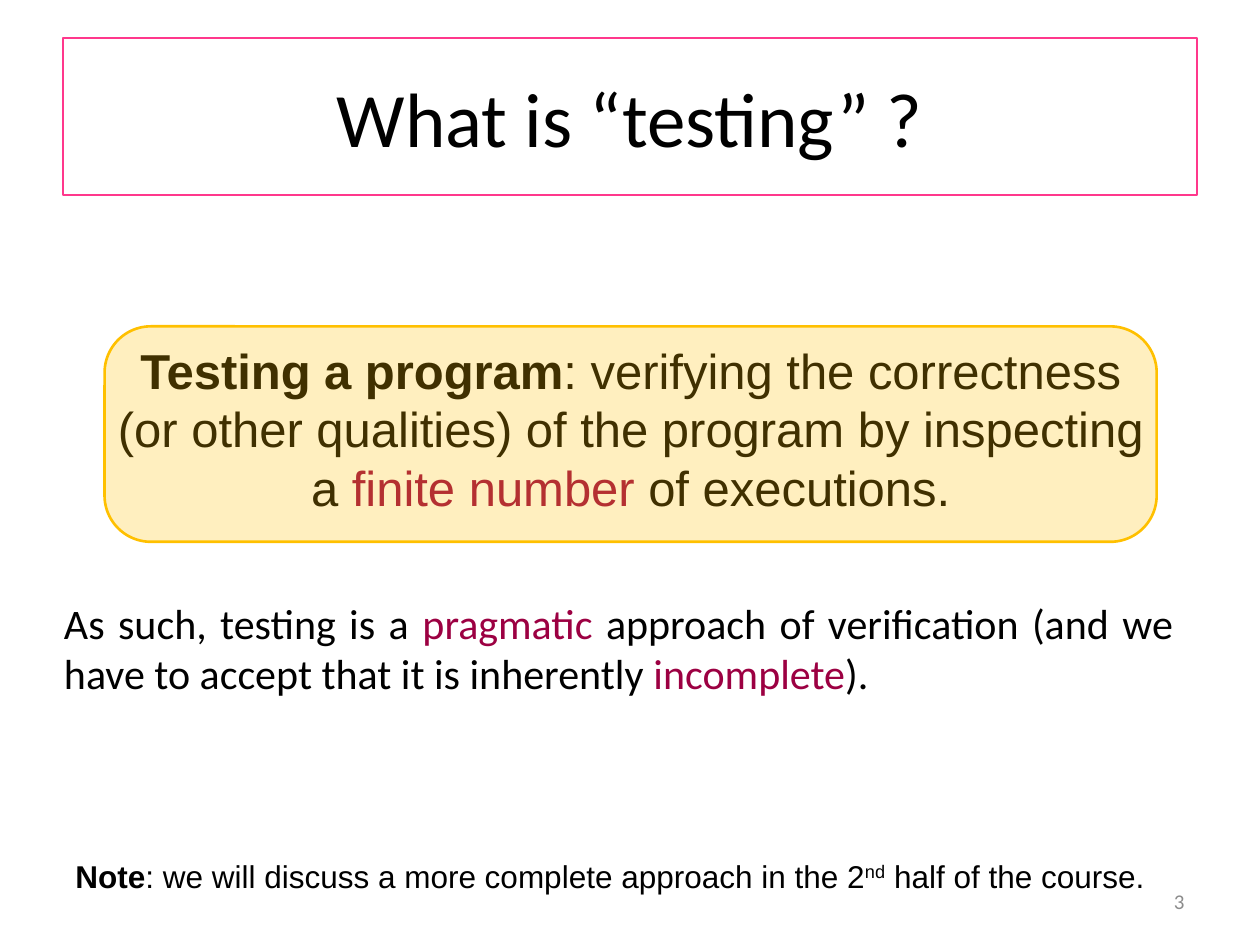
from dataclasses import dataclass

import pptx
import pptx.dml.color
import pptx.enum.shapes
import pptx.enum.text
import pptx.oxml.ns
import pptx.util

Inches = pptx.util.Inches
Pt = pptx.util.Pt
Align = pptx.enum.text.PP_ALIGN
Anchor = pptx.enum.text.MSO_ANCHOR
AutoSize = pptx.enum.text.MSO_AUTO_SIZE

COLORS = {
    "text": "000000",
    "accent": "9C0042",
    "number": "8C8C8C",
    "frame": "FF388C",
    "highlight": "FFC000",
}


@dataclass(frozen=True)
class Span:
    text: str
    color: str = "text"
    bold: bool = False
    superscript: bool = False


@dataclass(frozen=True)
class TextBlock:
    left: float
    top: float
    width: float
    height: float
    spans: tuple[Span, ...]
    size: float
    font: str
    align: Align = Align.LEFT
    anchor: Anchor = Anchor.TOP
    wrap: bool = True
    grow: bool = False
    space_before: float = 0


TITLE = TextBlock(0.5, 0.3, 9, 1.25, (Span("What is “testing” ?"),),
                  44, "Calibri", Align.CENTER, Anchor.MIDDLE)

TEXT_BLOCKS = (
    TextBlock(0.41, 4.69, 9, 1.83, (
        Span("As such, testing is a "),
        Span("pragmatic", "accent"),
        Span(" approach of verification (and we have to accept that it is inherently "),
        Span("incomplete", "accent"),
        Span(")."),
    ), 24, "Calibri", Align.JUSTIFY, space_before=4.8),
    TextBlock(7.17, 6.95, 2.33, 0.4, (Span("3", "number"),),
              12, "Calibri", Align.RIGHT, Anchor.MIDDLE),
    TextBlock(0.5, 6.75, 8.81, 0.4, (
        Span("Note", bold=True),
        Span(": we will discuss a more complete approach in the 2"),
        Span("nd", superscript=True),
        Span(" half of the course."),
    ), 18, "Arial", wrap=False, grow=True),
    TextBlock(0.83, 2.65, 8.35, 1.51, (
        Span("Testing a program", bold=True),
        Span(": verifying the correctness (or other qualities) of the program "
             "by inspecting a "),
        Span("finite number", "accent"),
        Span(" of executions."),
    ), 28, "Arial", Align.CENTER, grow=True),
)


def rgb(name: str) -> pptx.dml.color.RGBColor:
    return pptx.dml.color.RGBColor.from_string(COLORS[name])


def set_outline(shape, color: str, width: float) -> None:
    shape.line.color.rgb = rgb(color)
    shape.line.width = Pt(width)


def fill_text(shape, block: TextBlock) -> None:
    """Place the shape and write the block's formatted text into it."""
    shape.left, shape.top = Inches(block.left), Inches(block.top)
    shape.width, shape.height = Inches(block.width), Inches(block.height)
    frame = shape.text_frame
    frame.word_wrap = block.wrap
    frame.vertical_anchor = block.anchor
    frame.auto_size = AutoSize.SHAPE_TO_FIT_TEXT if block.grow else AutoSize.NONE
    para = frame.paragraphs[0]
    para.alignment = block.align
    para.space_before = Pt(block.space_before)
    for span in block.spans:
        run = para.add_run()
        run.text = span.text
        run.font.name = block.font
        run.font.size = Pt(block.size)
        run.font.bold = span.bold
        run.font.color.rgb = rgb(span.color)
        if span.superscript:
            run._r.get_or_add_rPr().set("baseline", "30000")


def add_highlight(page) -> None:
    """Lay a translucent rounded panel over the definition."""
    panel = page.shapes.add_shape(
        pptx.enum.shapes.MSO_SHAPE.ROUNDED_RECTANGLE,
        Inches(0.83), Inches(2.59), Inches(8.35), Inches(1.71))
    panel.adjustments[0] = 0.215
    panel.shadow.inherit = False
    panel.fill.solid()
    panel.fill.fore_color.rgb = rgb("highlight")
    color = panel.element.spPr.find(pptx.oxml.ns.qn("a:solidFill"))[0]
    color.append(color.makeelement(pptx.oxml.ns.qn("a:alpha"), {"val": "25000"}))
    set_outline(panel, "highlight", 1.5)


def main() -> None:
    deck = pptx.Presentation()
    deck.slide_width, deck.slide_height = Inches(10), Inches(7.5)
    page = deck.slides.add_slide(deck.slide_layouts.get_by_name("Title Only"))
    fill_text(page.shapes.title, TITLE)
    set_outline(page.shapes.title, "frame", 1)
    for block in TEXT_BLOCKS:
        box = page.shapes.add_textbox(0, 0, 0, 0)
        fill_text(box, block)
    add_highlight(page)
    deck.save("out.pptx")


if __name__ == "__main__":
    main()
